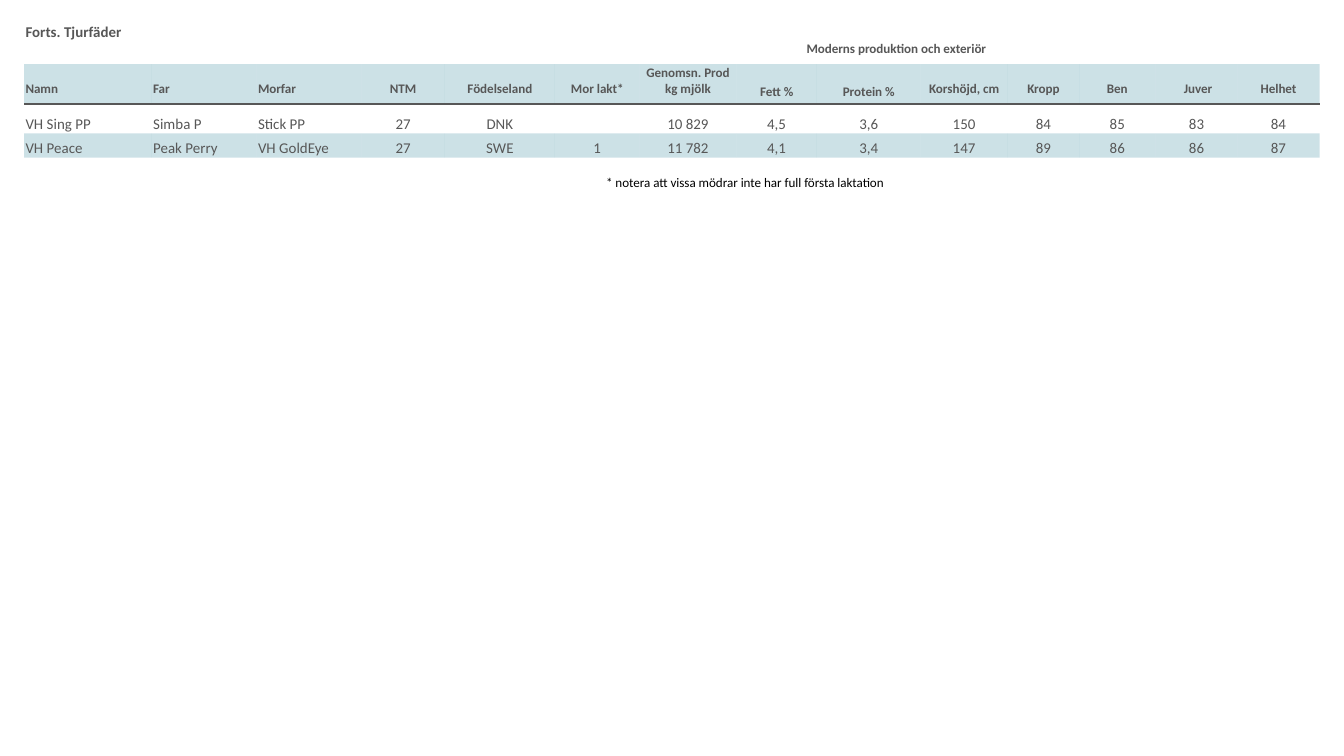
from dataclasses import dataclass

from lxml import etree
from pptx import Presentation
from pptx.dml.color import RGBColor
from pptx.enum.text import MSO_ANCHOR, PP_ALIGN
from pptx.oxml.ns import qn
from pptx.util import Inches, Pt

LEFT, CENTER = PP_ALIGN.LEFT, PP_ALIGN.CENTER
BOTTOM = MSO_ANCHOR.BOTTOM
PLAIN_TABLE = "{2D5ABB26-0587-4C30-8999-92F81FD0307C}"


@dataclass(frozen=True)
class Theme:
    font: str = "Calibri"
    grey: str = "575757"
    black: str = "000000"
    teal: str = "006B85"
    tint: int = 20
    rule: float = 1
    small: float = 7
    body: float = 8
    inset: float = 0.01


class SlideBuilder:
    def __init__(self, page, theme):
        self.page, self.theme = page, theme

    def table(self, left, top, widths, heights):
        frame = self.page.shapes.add_table(
            len(heights), len(widths), Inches(left), Inches(top),
            Inches(sum(widths)), Inches(sum(heights)))
        table = frame.table
        table.first_row = table.horz_banding = False
        table._tbl.tblPr.find(qn("a:tableStyleId")).text = PLAIN_TABLE
        for column, width in zip(table.columns, widths):
            column.width = Inches(width)
        for row, height in zip(table.rows, heights):
            row.height = Inches(height)
        return table

    def cell(self, cell, text="", size=None, bold=False, color=None,
             align=LEFT, bottom=0.05, tinted=False, border=None):
        theme = self.theme
        size = size or theme.small
        inset = Inches(theme.inset)
        formats = {"margin_left": inset, "margin_right": inset, "margin_top": inset,
                   "margin_bottom": Inches(bottom), "vertical_anchor": BOTTOM}
        for name, value in formats.items():
            setattr(cell, name, value)

        para = cell.text_frame.paragraphs[0]
        para.alignment = align
        if text:
            span = para.add_run()
            span.text = text
            for name, value in {"name": theme.font, "size": Pt(size), "bold": bold}.items():
                setattr(span.font, name, value)
            span.font.color.rgb = RGBColor.from_string(color or theme.grey)
        else:
            # An empty cell keeps its type size, so its row stays low
            etree.SubElement(para._p, qn("a:endParaRPr"), sz=str(int(size * 100)))

        if tinted:
            self.tint(cell)
        else:
            cell.fill.background()
        self.borders(cell, border)

    def tint(self, cell):
        cell.fill.solid()
        cell.fill.fore_color.rgb = RGBColor.from_string(self.theme.teal)
        color = cell._tc.tcPr.find(qn("a:solidFill"))[0]
        etree.SubElement(color, qn("a:alpha"), val=str(self.theme.tint * 1000))

    def borders(self, cell, ruled_side):
        for position, side in enumerate("LRTB"):
            line = etree.Element(qn(f"a:ln{side}"), w=str(int(Pt(self.theme.rule))))
            if side == ruled_side:
                fill = etree.SubElement(line, qn("a:solidFill"))
                etree.SubElement(fill, qn("a:srgbClr"), val=self.theme.grey)
            else:
                etree.SubElement(line, qn("a:noFill"))
            cell._tc.tcPr.insert(position, line)


WIDTHS = [0.95, 0.78, 0.78, 0.62, 0.82, 0.63, 0.72,
          0.6, 0.77, 0.65, 0.53, 0.57, 0.61, 0.61]
HEIGHTS = [0.31, 0.29, 0.22, 0.18]
NAME_COLUMNS = 3
HEADINGS = ["Namn", "Far", "Morfar", "NTM", "Födelseland", "Mor lakt*",
            "Genomsn. Prod kg mjölk", "Fett %", "Protein %", "Korshöjd, cm",
            "Kropp", "Ben", " Juver", "Helhet"]
BULLS = [
    ["VH Sing PP", "Simba P", "Stick PP", "27", "DNK", "", "10 829",
     "4,5", "3,6", "150", "84", "85", "83", "84"],
    ["VH Peace", "Peak Perry", "VH GoldEye", "27", "SWE", "1", "11 782",
     "4,1", "3,4", "147", "89", "86", "86", "87"],
]


def main():
    deck = Presentation()
    deck.slide_width = Inches(10)
    deck.slide_height = deck.slide_width * 9 // 16
    theme = Theme()
    builder = SlideBuilder(deck.slides.add_slide(deck.slide_layouts[6]), theme)

    # Table of bull sires: title row with merged groups
    table = builder.table(0.18, 0.16, WIDTHS, HEIGHTS)
    titles = {
        0: {"text": "Forts. Tjurfäder", "size": theme.body, "bold": True, "bottom": 0.17},
        5: {"text": "Moderns produktion och exteriör", "bold": True, "align": CENTER},
    }
    for column in range(len(WIDTHS)):
        builder.cell(table.cell(0, column), **titles.get(column, {}))
    for first, last in [(0, 1), (3, 4), (5, 12)]:
        table.cell(0, first).merge(table.cell(0, last))

    # Headings and one row for each bull
    for column, heading in enumerate(HEADINGS):
        align = LEFT if column < NAME_COLUMNS else CENTER
        builder.cell(table.cell(1, column), heading, bold=True, align=align,
                     bottom=0.03 if "%" in heading else 0.05, tinted=True, border="B")
        for number, bull in enumerate(BULLS):
            builder.cell(table.cell(2 + number, column), bull[column], size=theme.body,
                         align=align, bottom=0, tinted=number % 2 == 1,
                         border="T" if number == 0 else None)

    # Footnote
    note = builder.table(4.5, 1.28, [3.4], [0.19])
    builder.cell(note.cell(0, 0), "* notera att vissa mödrar inte har full första laktation",
                 color=theme.black)

    deck.save("out.pptx")


if __name__ == "__main__":
    main()
